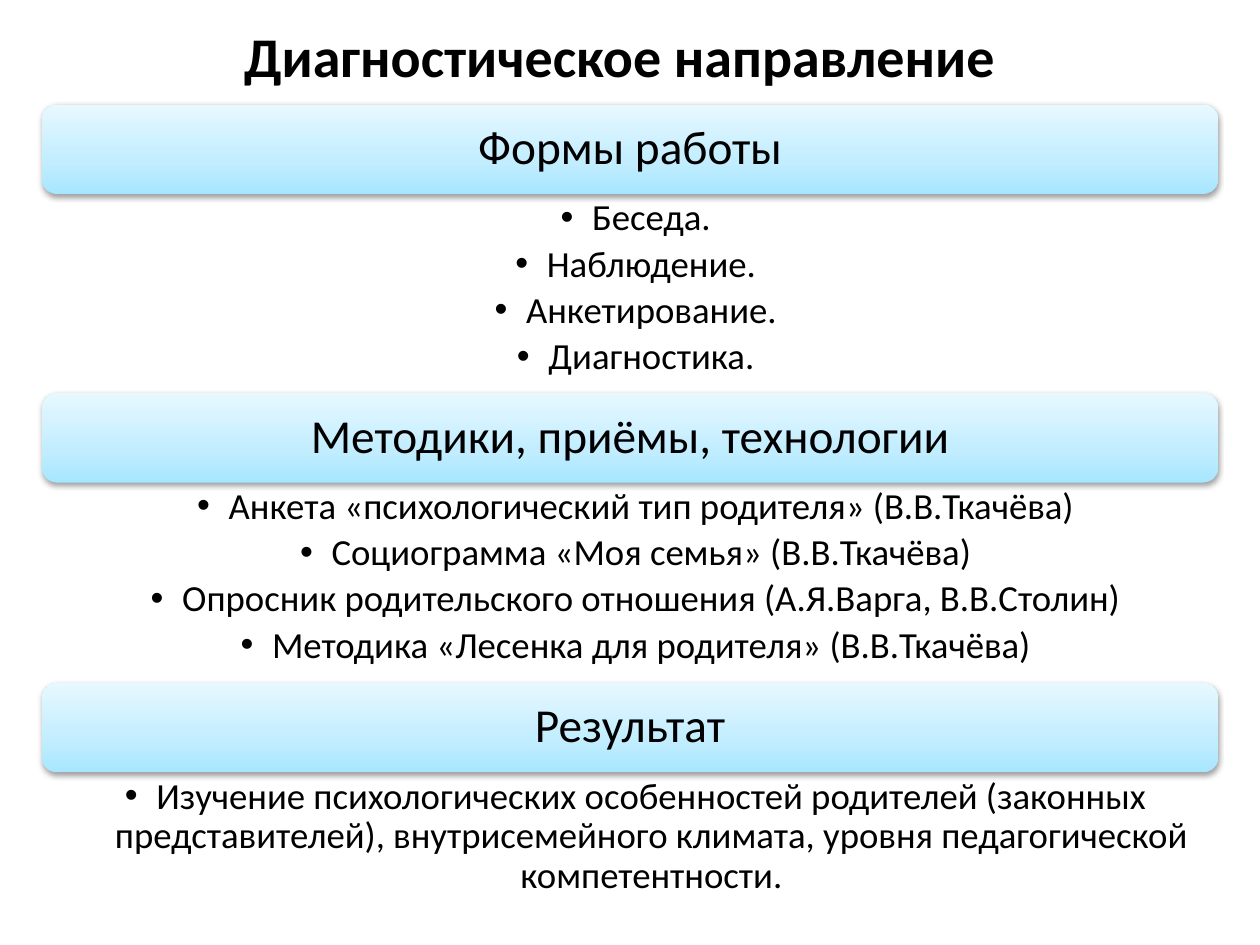
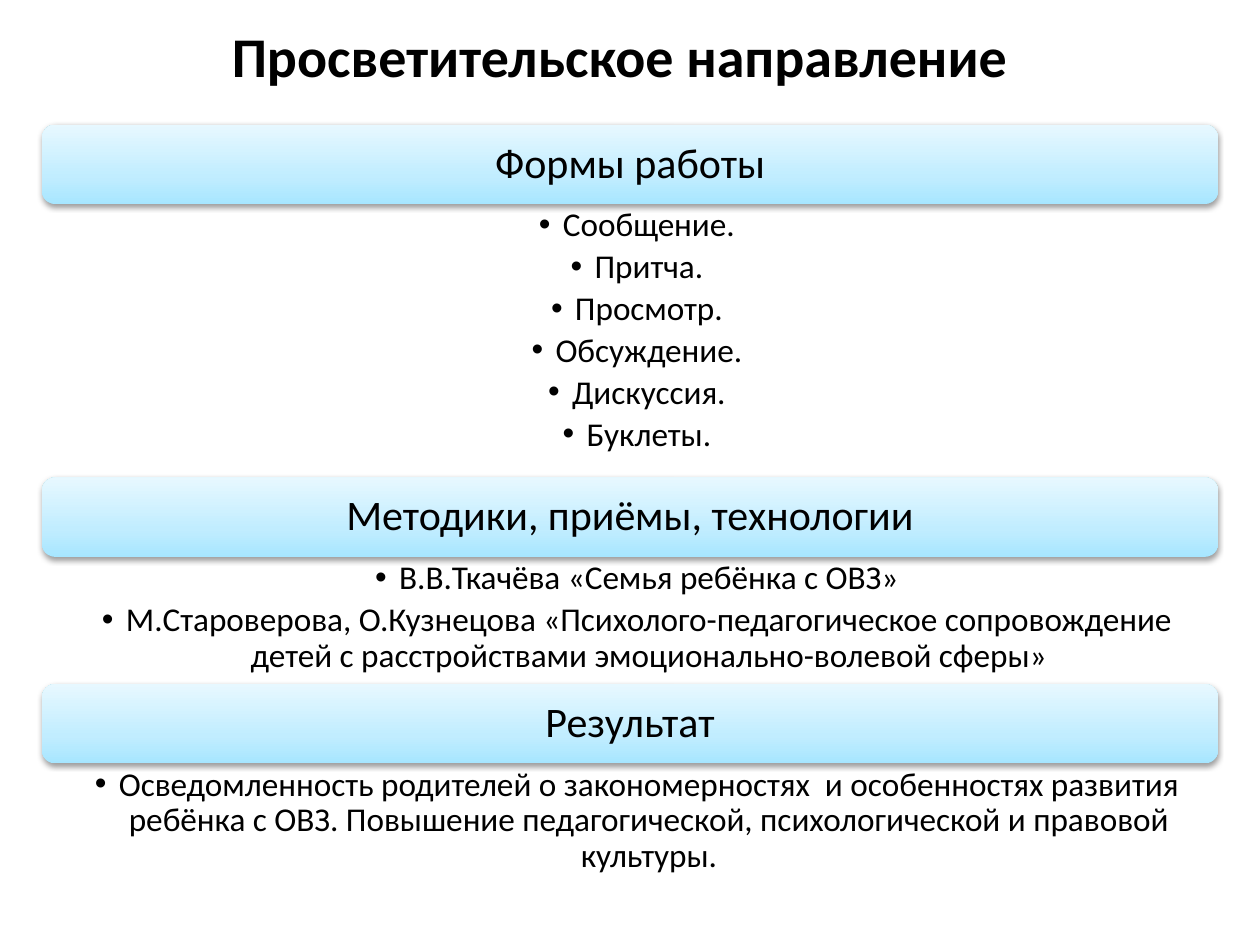
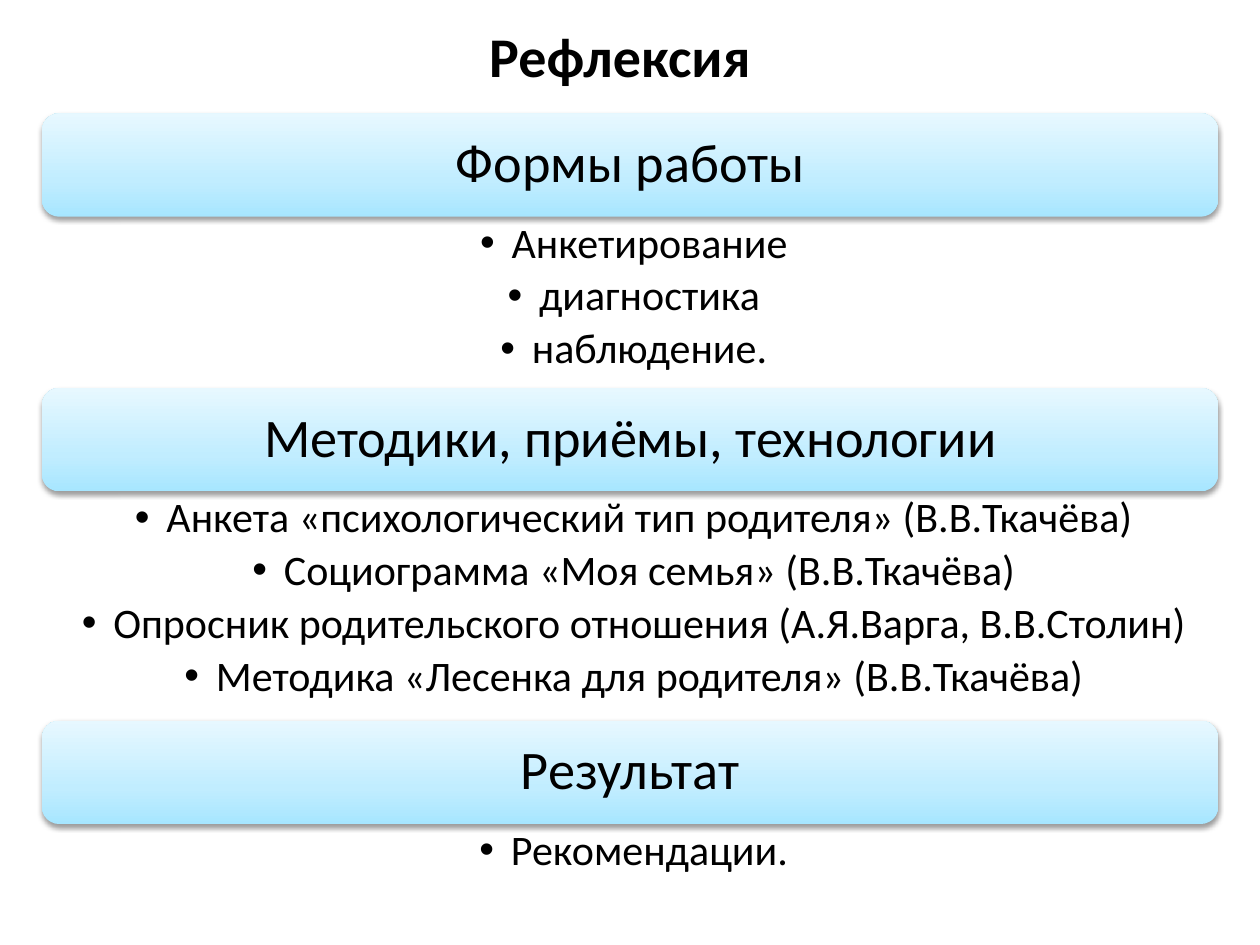
"""Three slides of gradient section bands, each followed by a bulleted list."""
from copy import deepcopy

from lxml import etree
from pptx import Presentation
from pptx import util as u
from pptx.dml.color import RGBColor
from pptx.enum import shapes, text
from pptx.oxml import ns

BLACK = RGBColor(0x00, 0x00, 0x00)
BAND_STOPS = [
    (0, RGBColor(0xA7, 0xE6, 0xFF)),
    (0.35, RGBColor(0xC1, 0xED, 0xFF)),
    (1, RGBColor(0xE7, 0xF8, 0xFF)),
]
FONT = "Calibri"
PAGE_WIDTH, PAGE_HEIGHT = 10, 7.5
MARGIN = PAGE_WIDTH / 30
BAND_WIDTH = PAGE_WIDTH - 2 * MARGIN
LINE_SPACING = 0.9
SPACE_SHARE = 0.18

HEADINGS = ["Формы работы", "Методики, приёмы, технологии", "Результат"]
QUESTIONNAIRES = [
    "Анкета «психологический тип родителя» (В.В.Ткачёва)",
    "Социограмма «Моя семья» (В.В.Ткачёва)",
    "Опросник родительского отношения (А.Я.Варга, В.В.Столин)",
    "Методика «Лесенка для родителя» (В.В.Ткачёва)",
]
PAGES = [
    {
        "title": "Диагностическое направление",
        "top": 0.83, "band": 0.71, "heights": [1.58, 1.59, 1.04],
        "heading_size": 27, "item_size": 21, "indent": 0.25,
        "insets": (0.3, 0.04, 0.21, 0.04),
        "lists": [
            ["Беседа.", "Наблюдение.", "Анкетирование.", "Диагностика."],
            QUESTIONNAIRES,
            ["Изучение психологических особенностей родителей (законных "
             "представителей), внутрисемейного климата, уровня "
             "педагогической компетентности."],
        ],
    },
    {
        "title": "Просветительское направление",
        "top": 0.99, "band": 0.63, "heights": [2.17, 1.01, 0.95],
        "heading_size": 24, "item_size": 19, "indent": 0.19,
        "insets": (0.3, 0.03, 0.19, 0.03),
        "lists": [
            ["Сообщение.", "Притча.", "Просмотр.", "Обсуждение.",
             "Дискуссия.", "Буклеты."],
            ["В.В.Ткачёва «Семья ребёнка с ОВЗ»",
             "М.Староверова, О.Кузнецова «Психолого-педагогическое "
             "сопровождение детей с расстройствами эмоционально-волевой "
             "сферы»"],
            ["Осведомленность родителей о закономерностях  и особенностях "
             "развития ребёнка с ОВЗ. Повышение педагогической, "
             "психологической и правовой культуры."],
        ],
    },
    {
        "title": "Рефлексия",
        "top": 0.9, "band": 0.82, "heights": [1.36, 1.82, 0.56],
        "heading_size": 31, "item_size": 24, "indent": 0.25,
        "insets": (0.3, 0.04, 0.24, 0.04),
        "lists": [
            ["Анкетирование", "диагностика", "наблюдение."],
            QUESTIONNAIRES,
            ["Рекомендации."],
        ],
    },
]


def set_all(target, values):
    """Set each named attribute of the target."""
    for name, value in values.items():
        setattr(target, name, value)


def set_frame(frame, insets, anchor):
    """Wrap a text frame and set its insets and anchor."""
    sides = ("margin_left", "margin_top", "margin_right", "margin_bottom")
    set_all(frame, {side: u.Inches(inset) for side, inset in zip(sides, insets)})
    set_all(frame, {"word_wrap": True, "vertical_anchor": anchor})


def write(para, words, size, bold=False, **layout):
    """Write one centred paragraph."""
    para.text = words
    set_all(para, {"alignment": text.PP_ALIGN.CENTER, **layout})
    set_all(para.font, {"name": FONT, "size": u.Pt(size), "bold": bold})
    para.font.color.rgb = BLACK


def add_bullet(para, indent):
    """Give a paragraph a round bullet with a hanging indent."""
    properties = para._p.get_or_add_pPr()
    properties.set("marL", str(u.Inches(indent)))
    properties.set("indent", str(-u.Inches(indent)))
    etree.SubElement(properties, ns.qn("a:buFont")).set("typeface", "Arial")
    etree.SubElement(properties, ns.qn("a:buChar")).set("char", "•")


def fill_gradient(shape):
    """Fill a shape with the band gradient, dark at the foot."""
    shape.fill.gradient()
    shape.fill.gradient_angle = 90
    stop_list = shape.element.spPr.find(".//" + ns.qn("a:gsLst"))
    stop_list.append(deepcopy(stop_list[-1]))
    for stop, (position, color) in zip(shape.fill.gradient_stops, BAND_STOPS):
        stop.position = position
        stop.color.rgb = color


def add_shadow(shape):
    """Give a shape a soft shadow that falls straight down."""
    shape.shadow.inherit = False
    effects = shape.element.spPr.find(ns.qn("a:effectLst"))
    shadow = etree.SubElement(
        effects, ns.qn("a:outerShdw"), blurRad="40000", dist="20000",
        dir="5400000", rotWithShape="0")
    color = etree.SubElement(shadow, ns.qn("a:srgbClr"), val=str(BLACK))
    etree.SubElement(color, ns.qn("a:alpha"), val="38000")


def add_title(page, words):
    """Add the slide title."""
    box = page.shapes.add_textbox(*map(u.Inches, (0.42, 0, 9, 0.87)))
    set_frame(box.text_frame, (0.1, 0.05, 0.1, 0.05), text.MSO_ANCHOR.MIDDLE)
    write(box.text_frame.paragraphs[0], words, 32, bold=True)


def add_band(page, top, height, words, size):
    """Add a section band with its heading."""
    band = page.shapes.add_shape(
        shapes.MSO_SHAPE.ROUNDED_RECTANGLE,
        *map(u.Inches, (MARGIN, top, BAND_WIDTH, height)))
    fill_gradient(band)
    band.line.fill.background()
    add_shadow(band)
    set_frame(band.text_frame, (0.1,) * 4, text.MSO_ANCHOR.MIDDLE)
    write(band.text_frame.paragraphs[0], words, size, line_spacing=LINE_SPACING)


def add_list(page, top, height, items, style):
    """Add the bulleted list under a band."""
    box = page.shapes.add_textbox(
        *map(u.Inches, (MARGIN, top, BAND_WIDTH, height)))
    frame = box.text_frame
    set_frame(frame, style["insets"], text.MSO_ANCHOR.TOP)
    size = style["item_size"]
    for number, item in enumerate(items):
        para = frame.add_paragraph() if number else frame.paragraphs[0]
        add_bullet(para, style["indent"])
        write(para, item, size, level=1, line_spacing=LINE_SPACING,
              space_after=u.Pt(size * SPACE_SHARE))


def add_page(deck, style):
    """Add a slide with a title and its stacked sections."""
    page = deck.slides.add_slide(deck.slide_layouts[6])
    add_title(page, style["title"])
    top = style["top"]
    for heading, items, height in zip(HEADINGS, style["lists"], style["heights"]):
        add_band(page, top, style["band"], heading, style["heading_size"])
        top += style["band"]
        add_list(page, top, height, items, style)
        top += height


def main():
    """Build and save the deck."""
    deck = Presentation()
    set_all(deck, {"slide_width": u.Inches(PAGE_WIDTH),
                   "slide_height": u.Inches(PAGE_HEIGHT)})
    for style in PAGES:
        add_page(deck, style)
    deck.save("out.pptx")


if __name__ == "__main__":
    main()
